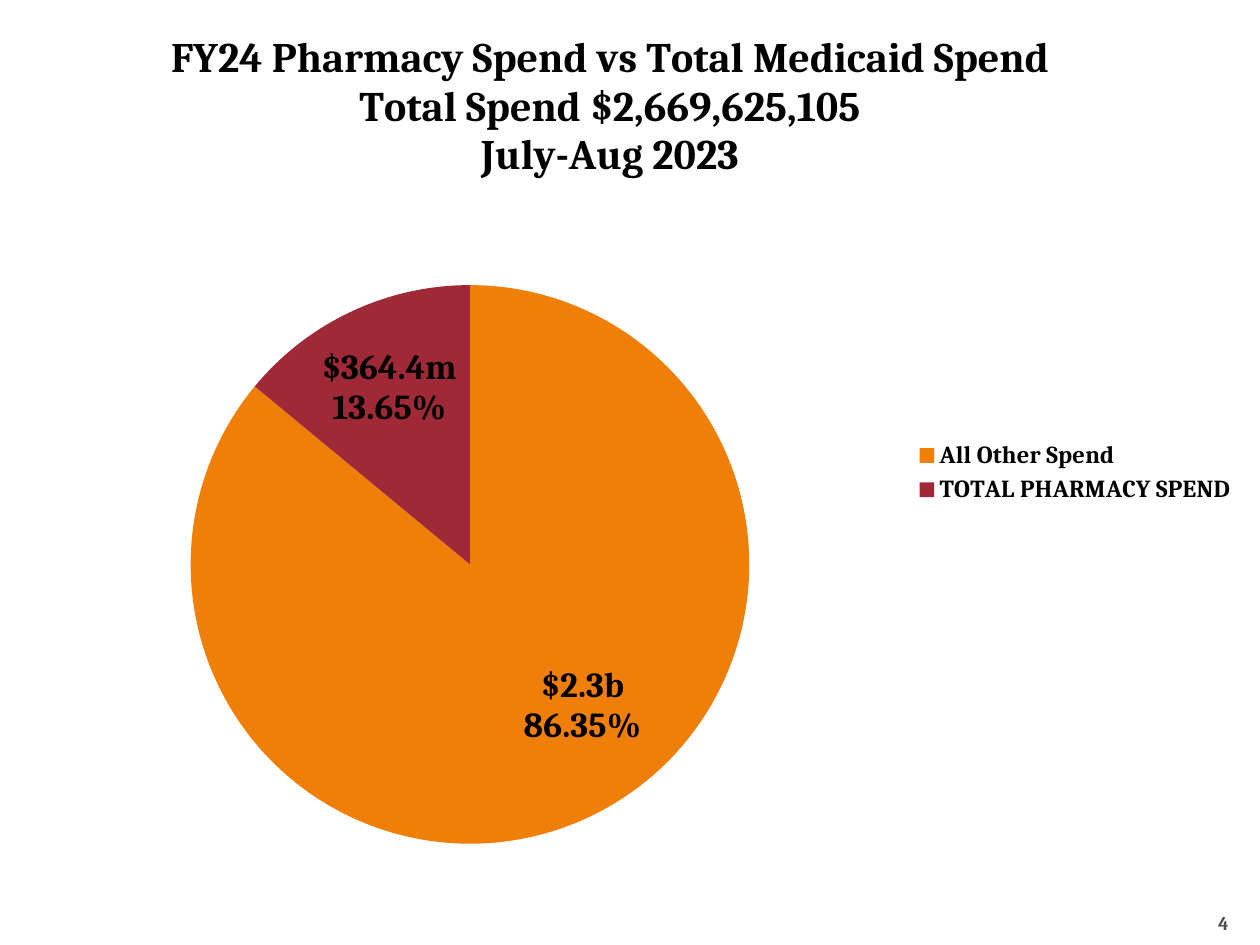
import pptx
import pptx.chart.data
import pptx.dml.color
import pptx.enum.chart
import pptx.enum.text
import pptx.oxml
import pptx.oxml.ns
import pptx.util
from pptx.util import Cm

FONT = "Cambria"
BLACK = pptx.dml.color.RGBColor(0x00, 0x00, 0x00)
GREY = pptx.dml.color.RGBColor(0x4D, 0x4D, 0x4D)
ORANGE = pptx.dml.color.RGBColor(0xF0, 0x7F, 0x09)
MAROON = pptx.dml.color.RGBColor(0x9F, 0x29, 0x36)

TITLE = (
    "FY24 Pharmacy Spend vs Total Medicaid Spend\n"
    "Total Spend $2,669,625,105\n"
    "July-Aug 2023"
)
SHARES = [
    ("All Other Spend", 86, "$2.3b\n86.35%", ORANGE, (4.3, 1.7)),
    ("TOTAL PHARMACY SPEND", 14, "$364.4m\n13.65%", MAROON, (-1.7, -5.4)),
]


def style_font(font, size, color=BLACK):
    """Apply the bold slide typeface at a size in points."""
    font.name = FONT
    font.size = pptx.util.Pt(size)
    font.bold = True
    font.color.rgb = color


def fill_text(text_frame, text, size, color=BLACK):
    """Write text line by line and format its runs."""
    text_frame.text = text
    for para in text_frame.paragraphs:
        for span in para.runs:
            style_font(span.font, size, color)


def set_layout(element, index, modes=(), **percents):
    """Give a chart part a manual layout in percent of the chart."""
    for old in element.findall(pptx.oxml.ns.qn("c:layout")):
        element.remove(old)
    parts = [f'<c:{mode} val="{value}"/>' for mode, value in modes]
    parts += [f'<c:{name} val="{value / 100:.3f}"/>' for name, value in percents.items()]
    xml = (
        f'<c:layout {pptx.oxml.ns.nsdecls("c")}><c:manualLayout>'
        f'{"".join(parts)}</c:manualLayout></c:layout>'
    )
    element.insert(index, pptx.oxml.parse_xml(xml))


def add_spend_pie(page, left, top, width, height):
    """Place the titled spend pie with its legend in the given box."""
    data = pptx.chart.data.CategoryChartData()
    data.categories = [share[0] for share in SHARES]
    data.add_series("Series 1", [share[1] for share in SHARES])
    chart = page.shapes.add_chart(
        pptx.enum.chart.XL_CHART_TYPE.PIE, left, top, width, height, data
    ).chart
    chart.font.name = FONT
    chart.font.size = pptx.util.Pt(10)
    chart.font.color.rgb = BLACK

    edges = (("xMode", "edge"), ("yMode", "edge"))
    inner = (("layoutTarget", "inner"),) + edges
    chart.has_title = True
    fill_text(chart.chart_title.text_frame, TITLE, 24)
    set_layout(chart.chart_title._element, 1, edges, x=12.7, y=2)

    chart.has_legend = True
    chart.legend.position = pptx.enum.chart.XL_LEGEND_POSITION.RIGHT
    chart.legend.include_in_layout = False
    style_font(chart.legend.font, 14)
    set_layout(chart.legend._element, 1, edges, x=73, y=46.1, w=26, h=8)

    plot_area = chart._chartSpace.chart.plotArea
    set_layout(plot_area, 0, inner, x=14.6, y=29.8, w=45.1, h=60.5)

    plot = chart.plots[0]
    plot.vary_by_categories = True
    for index, (_, _, text, color, (shift_x, shift_y)) in enumerate(SHARES):
        point = plot.series[0].points[index]
        point.format.fill.solid()
        point.format.fill.fore_color.rgb = color
        label = point.data_label
        fill_text(label.text_frame, text, 20)
        label.position = pptx.enum.chart.XL_LABEL_POSITION.CENTER
        set_layout(label._get_or_add_dLbl(), 1, x=shift_x, y=shift_y)


def add_page_number(page, left, top, width, height):
    """Place the page number at the lower right of the given box."""
    box = page.shapes.add_textbox(left, top, width, height)
    frame = box.text_frame
    frame.word_wrap = True
    frame.margin_left = frame.margin_right = frame.margin_bottom = 0
    frame.vertical_anchor = pptx.enum.text.MSO_ANCHOR.BOTTOM
    fill_text(frame, "4", 11, GREY)
    frame.paragraphs[0].alignment = pptx.enum.text.PP_ALIGN.RIGHT


def main():
    """Build the one-page deck and save it."""
    deck = pptx.Presentation()
    deck.slide_width, deck.slide_height = Cm(25.4), Cm(19.05)
    page = deck.slides.add_slide(deck.slide_layouts[6])
    add_page_number(page, Cm(23.5), Cm(17.82), Cm(1.27), Cm(1.02))
    add_spend_pie(page, Cm(0.2), Cm(0.2), Cm(24.97), Cm(18.62))
    deck.save("out.pptx")


if __name__ == "__main__":
    main()
